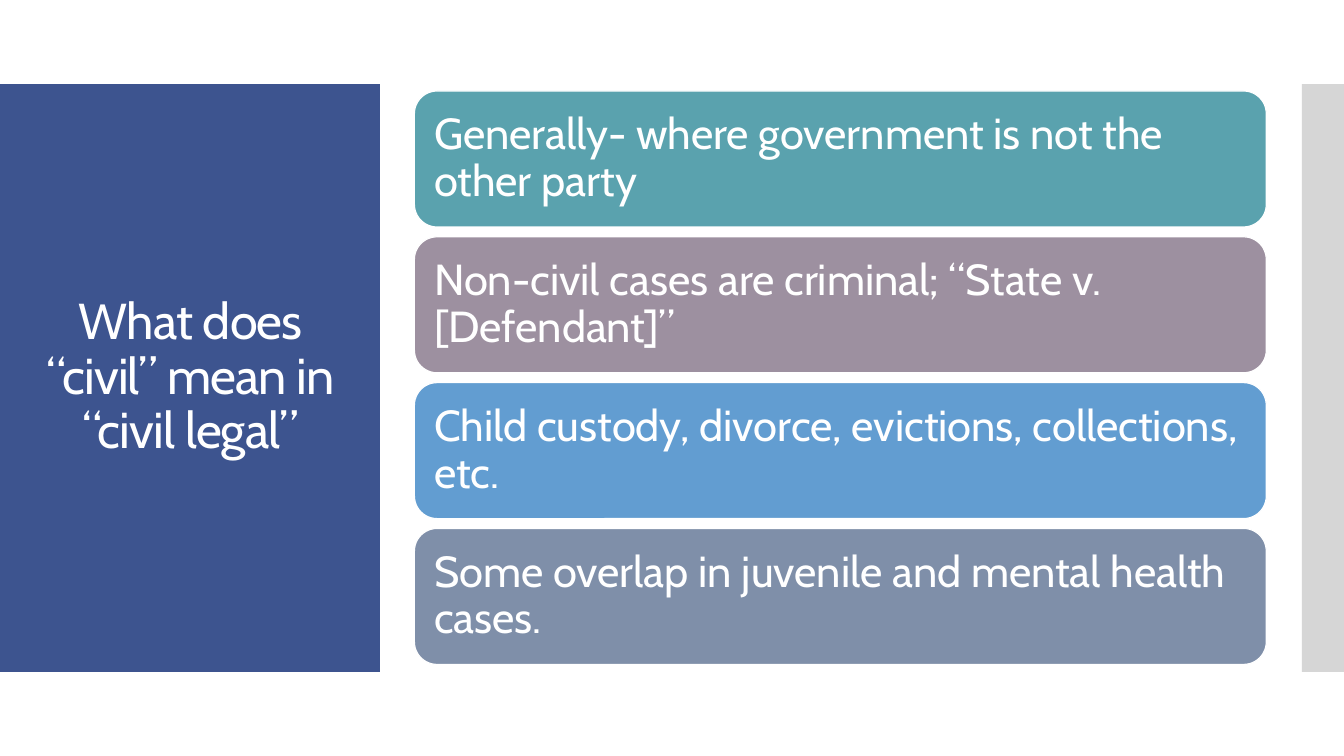
import pptx
import pptx.util
import pptx.dml.color
import pptx.enum.shapes
import pptx.enum.text

Pt = pptx.util.Pt
Shape = pptx.enum.shapes.MSO_SHAPE
Align = pptx.enum.text.PP_ALIGN

THEME = {
    "font": "Cabin",
    "text": "FFFFFF",
    "panel": "3D548F",
    "edge": "D6D6D6",
    "cards": ["5AA2AE", "9D90A0", "629DD1", "7F8FA9"],
    "title": 36,
    "body": 31,
}
POINTS = [
    "Generally- where government is not the other party",
    "Non-civil cases are criminal; “State v. [Defendant]”",
    "Child custody, divorce, evictions, collections, etc.",
    "Some overlap in juvenile and mental health cases.",
]


def tint(code):
    """Turn a hex code into a colour."""
    return pptx.dml.color.RGBColor.from_string(code)


def apply(item, values):
    """Set every attribute listed in a dict."""
    for name, value in values.items():
        setattr(item, name, value)


def block(slide, kind, box, fill):
    """Draw a flat filled shape in the given box."""
    shape = slide.shapes.add_shape(kind, *map(Pt, box))
    shape.shadow.inherit = False
    shape.fill.solid()
    shape.fill.fore_color.rgb = tint(fill)
    shape.line.fill.background()
    return shape


def write(shape, text, size, align, inset):
    """Fill a shape with one styled paragraph."""
    frame = shape.text_frame
    frame.text = text
    apply(frame, {
        "word_wrap": True,
        "auto_size": pptx.enum.text.MSO_AUTO_SIZE.NONE,
        "vertical_anchor": pptx.enum.text.MSO_ANCHOR.MIDDLE,
        "margin_left": Pt(inset), "margin_right": Pt(inset),
        "margin_top": Pt(inset), "margin_bottom": Pt(inset),
    })
    para = frame.paragraphs[0]
    apply(para, {"alignment": align, "line_spacing": 0.9})
    font = para.runs[0].font
    apply(font, {"name": THEME["font"], "size": Pt(size)})
    font.color.rgb = tint(THEME["text"])
    return para.runs[0]


def panel(slide, box, text):
    """Place the title over a coloured panel."""
    left, top, width, height = box
    back = block(slide, Shape.RECTANGLE, box, THEME["panel"])
    title = slide.shapes.title
    apply(title, {
        "left": Pt(left + 20), "top": Pt(top + 28.6),
        "width": Pt(width - 39.4), "height": Pt(height - 57.6),
    })
    run = write(title, text, THEME["title"], Align.CENTER, 7.2)
    run.font._element.set("spc", "-60")
    back._element.addnext(title._element)


def cards(slide, box, texts):
    """Stack equal rounded cards in the box."""
    left, top, width, height = box
    gap = 7
    tall = (height - gap * (len(texts) - 1)) / len(texts)
    for i, (text, fill) in enumerate(zip(texts, THEME["cards"])):
        spot = (left, top + i * (tall + gap), width, tall)
        card = block(slide, Shape.ROUNDED_RECTANGLE, spot, fill)
        card.line.color.rgb = tint(THEME["text"])
        card.line.width = Pt(0.85)
        write(card, text, THEME["body"], Align.LEFT, 9.36)


def main():
    """Build and save the slide."""
    deck = pptx.Presentation()
    apply(deck, {"slide_width": Pt(960), "slide_height": Pt(540)})
    slide = deck.slides.add_slide(deck.slide_layouts[5])
    panel(slide, (0, 60, 271.4, 420), "What does “civil” mean in “civil legal”")
    block(slide, Shape.RECTANGLE, (930, 60, 30, 420), THEME["edge"])
    cards(slide, (296, 65, 608.5, 409.6), POINTS)
    deck.save("out.pptx")


if __name__ == "__main__":
    main()
